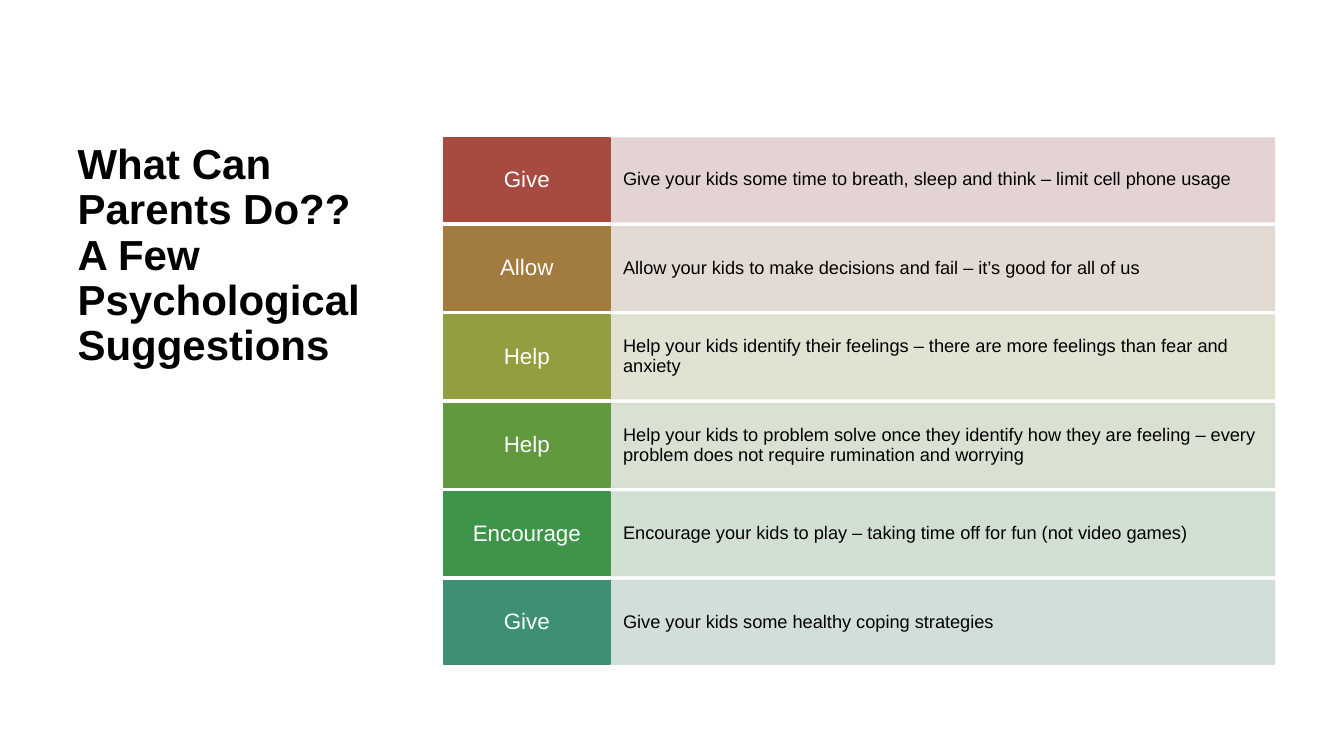
from dataclasses import dataclass

from lxml import etree
from pptx import Presentation
from pptx.dml.color import RGBColor
from pptx.enum import shapes, text
from pptx.oxml.ns import qn
from pptx.util import Inches, Pt


@dataclass(frozen=True)
class Theme:
    font: str = "Arial"
    dark: str = "000000"
    light: str = "FFFFFF"
    title_size: int = 30
    label_size: int = 16
    advice_size: int = 13
    line_spacing: float = 0.9
    advice_opacity: int = 90


THEME = Theme()

TITLE = "What Can Parents Do??\vA Few Psychological Suggestions"

# Label, advice, label fill, advice fill
SUGGESTIONS = [
    ("Give", "Give your kids some time to breath, sleep and think – limit cell phone usage",
     "A74B40", "E1D0CF"),
    ("Allow", "Allow your kids to make decisions and fail – it’s good for all of us",
     "A27C3F", "E0D8CF"),
    ("Help", "Help your kids identify their feelings – there are more feelings than fear and anxiety",
     "929E3F", "DEDFCE"),
    ("Help", "Help your kids to problem solve once they identify how they are feeling – "
     "every problem does not require rumination and worrying",
     "60993E", "D5DECE"),
    ("Encourage", "Encourage your kids to play – taking time off for fun (not video games)",
     "3E9549", "CEDDCF"),
    ("Give", "Give your kids some healthy coping strategies",
     "3D9072", "CEDBD5"),
]

TOP, HEIGHT = 1.37, 5.22
LABEL_LEFT, LABEL_WIDTH = 4.4, 1.65
ADVICE_LEFT, ADVICE_WIDTH = LABEL_LEFT + LABEL_WIDTH, 6.59
ROW_HEIGHT = 0.83
ROW_PITCH = (HEIGHT - ROW_HEIGHT) / (len(SUGGESTIONS) - 1)


def write(frame, words, size, color, align, bold=False):
    frame.text = words
    frame.word_wrap = True
    para = frame.paragraphs[0]
    para.alignment = align
    para.line_spacing = THEME.line_spacing
    para.font.name = THEME.font
    para.font.size = Pt(size)
    para.font.bold = bold
    para.font.color.rgb = RGBColor.from_string(color)


def set_opacity(box, percent):
    """Make both the fill and the outline of a box partly transparent."""
    for color in box._element.spPr.iter(qn("a:srgbClr")):
        etree.SubElement(color, qn("a:alpha")).set("val", str(percent * 1000))


def add_box(slide, left, top, width, fill, margins):
    box = slide.shapes.add_shape(shapes.MSO_SHAPE.RECTANGLE, Inches(left), Inches(top),
                                 Inches(width), Inches(ROW_HEIGHT))
    box.shadow.inherit = False
    box.fill.solid()
    box.fill.fore_color.rgb = RGBColor.from_string(fill)
    box.line.color.rgb = RGBColor.from_string(fill)
    box.line.width = Pt(1)
    frame = box.text_frame
    frame.vertical_anchor = text.MSO_ANCHOR.MIDDLE
    side, end = margins
    frame.margin_left = frame.margin_right = Inches(side)
    frame.margin_top = frame.margin_bottom = Inches(end)
    return box


def add_suggestion(slide, top, label, advice, label_fill, advice_fill):
    advice_box = add_box(slide, ADVICE_LEFT, top, ADVICE_WIDTH, advice_fill, (0.13, 0.21))
    set_opacity(advice_box, THEME.advice_opacity)
    write(advice_box.text_frame, advice, THEME.advice_size, THEME.dark, text.PP_ALIGN.LEFT)
    label_box = add_box(slide, LABEL_LEFT, top, LABEL_WIDTH, label_fill, (0.09, 0.08))
    write(label_box.text_frame, label, THEME.label_size, THEME.light, text.PP_ALIGN.CENTER)


def set_title(slide):
    title = slide.shapes.title
    title.left, title.top = Inches(0.67), Inches(TOP)
    title.width, title.height = Inches(3.18), Inches(HEIGHT)
    frame = title.text_frame
    write(frame, TITLE, THEME.title_size, THEME.dark, text.PP_ALIGN.LEFT, bold=True)
    frame.vertical_anchor = text.MSO_ANCHOR.TOP
    frame.auto_size = text.MSO_AUTO_SIZE.NONE


def main():
    deck = Presentation()
    deck.slide_width, deck.slide_height = Inches(13.33), Inches(7.5)
    slide = deck.slides.add_slide(deck.slide_layouts.get_by_name("Title Only"))
    set_title(slide)
    for row, suggestion in enumerate(SUGGESTIONS):
        add_suggestion(slide, TOP + row * ROW_PITCH, *suggestion)
    deck.save("out.pptx")


if __name__ == "__main__":
    main()
